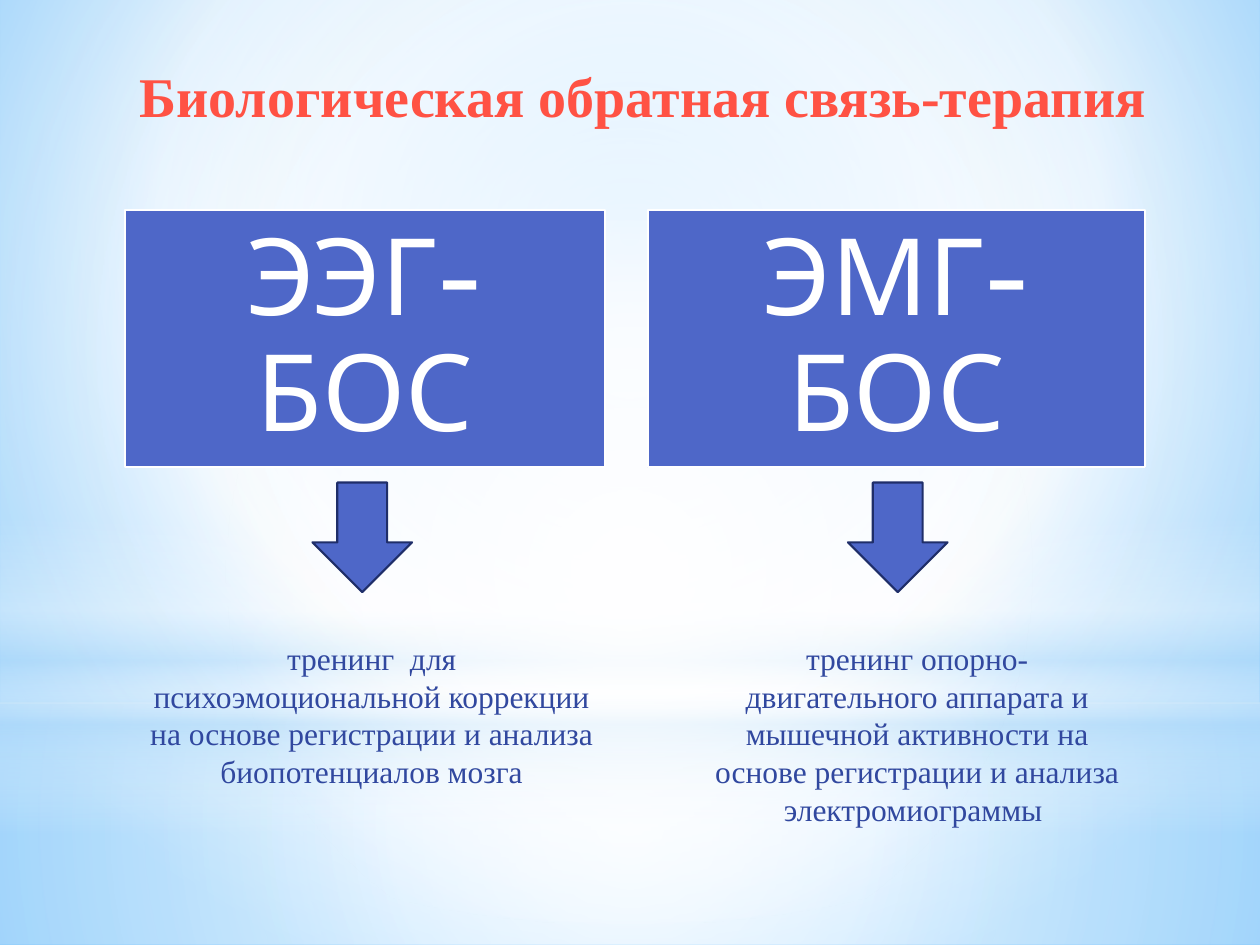
from pptx import Presentation
from pptx.dml.color import RGBColor
from pptx.enum.shapes import MSO_SHAPE
from pptx.enum.text import MSO_ANCHOR, PP_ALIGN
from pptx.oxml import parse_xml
from pptx.oxml.ns import nsdecls, qn
from pptx.util import Inches, Pt

WHITE, PALE, BLUE, NAVY, INK, CORAL = "FFFFFF", "B4DCFA", "4E67C8", "1F2E69", "31489F", "FF5244"
SERIF, SANS = "Times New Roman", "Cabin"
CENTRE = (50, 50, 50, 50)

GLOWS = [
    (MSO_SHAPE.RECTANGLE, 5.58, 1.92, [(0, WHITE, 91), (37, WHITE, 76), (100, PALE, 79)], CENTRE),
    (MSO_SHAPE.RECTANGLE, 0, 5.58, [(0, WHITE, 89), (48, WHITE, 62), (100, PALE, 79)], CENTRE),
    (MSO_SHAPE.RECTANGLE, 4.12, 2.5, [(0, WHITE, 0), (29, WHITE, 30), (45, PALE, 40),
                                      (55, WHITE, 26), (65, PALE, 60), (100, WHITE, 0)], None),
    (MSO_SHAPE.OVAL, 1.75, 5.58, [(0, WHITE, 100), (56, WHITE, 0)], CENTRE),
]

THERAPIES = [
    ("ЭЭГ-БОС", 0.99, 3.81, 2.48, 1.06, 3.78, 1.31,
     "тренинг  для психоэмоциональной коррекции на основе регистрации и анализа биопотенциалов мозга"),
    ("ЭМГ-БОС", 5.14, 3.95, 6.73, 5.55, 3.46, 1.62,
     "тренинг опорно-двигательного аппарата и мышечной активности на основе регистрации "
     "и анализа электромиограммы "),
]


def colour(value):
    """Turn a hex string into a colour."""
    return RGBColor.from_string(value)


def apply_gradient(fill, owner, stops, focus):
    """Fill with (position, colour, opacity) stops, circular around focus or else downwards."""
    fill.gradient()
    gradient = owner.find(".//" + qn("a:gradFill"))
    for child in list(gradient):
        gradient.remove(child)
    marks = "".join(
        f'<a:gs pos="{position * 1000}"><a:srgbClr val="{value}">'
        f'<a:alpha val="{opacity * 1000}"/></a:srgbClr></a:gs>'
        for position, value, opacity in stops)
    gradient.append(parse_xml(f'<a:gsLst {nsdecls("a")}>{marks}</a:gsLst>'))
    if focus:
        edges = " ".join(f'{side}="{share * 1000}"' for side, share in zip("ltrb", focus))
        direction = f'<a:path {nsdecls("a")} path="circle"><a:fillToRect {edges}/></a:path>'
    else:
        direction = f'<a:lin {nsdecls("a")} ang="5400000" scaled="0"/>'
    gradient.append(parse_xml(direction))


class TherapySlide:
    """Holds the style and the current slide."""

    def __init__(self, slide):
        self.slide = slide

    def background(self, stops, focus):
        """Paint the slide background."""
        apply_gradient(self.slide.background.fill, self.slide.element, stops, focus)

    def shape(self, kind, left, top, width, height):
        """Add a preset shape without shadow."""
        shape = self.slide.shapes.add_shape(
            kind, Inches(left), Inches(top), Inches(width), Inches(height))
        shape.shadow.inherit = False
        return shape

    def glow(self, kind, top, height, stops, focus):
        """Add a full-width translucent gradient."""
        glow = self.shape(kind, 0, top, 10, height)
        apply_gradient(glow.fill, glow.element, stops, focus)
        glow.line.fill.background()

    def solid(self, kind, left, top, width, height, outline):
        """Add a blue shape with an outline."""
        solid = self.shape(kind, left, top, width, height)
        solid.fill.solid()
        solid.fill.fore_color.rgb = colour(BLUE)
        solid.line.color.rgb = colour(outline)
        solid.line.width = Pt(1.25)
        return solid

    def centred(self, frame, text, size, font, ink, bold=False):
        """Set one centred paragraph."""
        frame.word_wrap = True
        frame.text = text
        paragraph = frame.paragraphs[0]
        paragraph.alignment = PP_ALIGN.CENTER
        for run in paragraph.runs:
            run.font.size = Pt(size)
            run.font.name = font
            run.font.bold = bold
            run.font.color.rgb = colour(ink)
        return paragraph

    def text(self, left, top, width, height, text, size, ink, bold=False):
        """Add a serif text box."""
        box = self.slide.shapes.add_textbox(
            Inches(left), Inches(top), Inches(width), Inches(height))
        self.centred(box.text_frame, text, size, SERIF, ink, bold)

    def card(self, left, width, label):
        """Add a blue card with a large label."""
        frame = self.solid(MSO_SHAPE.RECTANGLE, left, 1.67, width, 2.04, WHITE).text_frame
        frame.margin_left = frame.margin_right = Inches(0.25)
        frame.margin_top = frame.margin_bottom = Inches(0.25)
        frame.vertical_anchor = MSO_ANCHOR.MIDDLE
        self.centred(frame, label, 61, SANS, WHITE).line_spacing = 0.9


def main():
    """Build the slide and save it."""
    deck = Presentation()
    deck.slide_width, deck.slide_height = Inches(10), Inches(7.5)
    page = TherapySlide(deck.slides.add_slide(deck.slide_layouts[6]))
    page.background([(0, "9ED5FF", 100), (60, WHITE, 100), (100, "5BB9FF", 100)], (20, 10, 20, 60))
    for glow in GLOWS:
        page.glow(*glow)
    page.text(0.83, 0.44, 8.66, 1.25, "Биологическая обратная связь-терапия ", 32, CORAL, True)
    for label, left, width, arrow_left, note_left, note_width, note_height, note in THERAPIES:
        page.card(left, width, label)
        page.solid(MSO_SHAPE.DOWN_ARROW, arrow_left, 3.83, 0.79, 0.87, NAVY)
        page.text(note_left, 5.02, note_width, note_height, note, 18, INK)
    deck.save("out.pptx")


if __name__ == "__main__":
    main()
